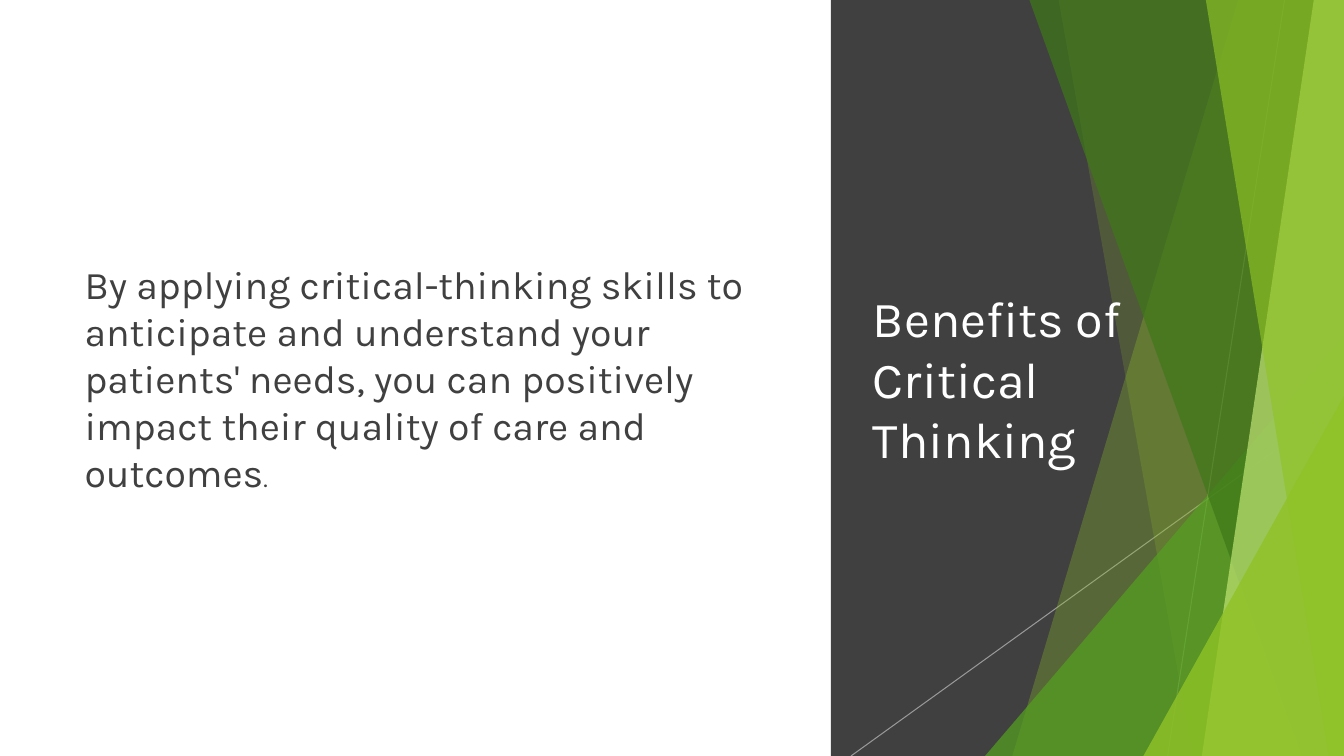
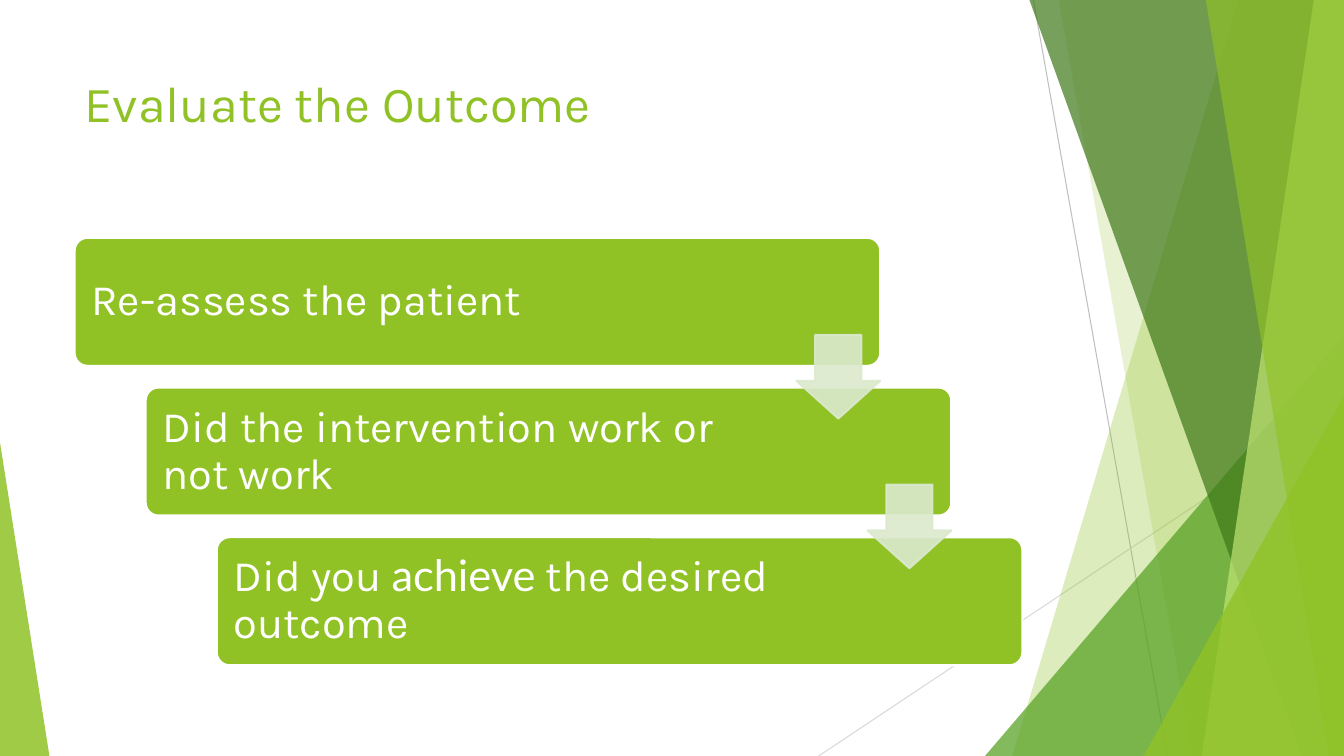
from lxml.etree import SubElement
from pptx import Presentation
from pptx.dml.color import RGBColor
from pptx.enum.shapes import MSO_CONNECTOR as Connector, MSO_SHAPE as Preset
from pptx.enum.text import MSO_ANCHOR as Anchor, PP_ALIGN as Align
from pptx.oxml.ns import qn
from pptx.util import Inches, Pt

WIDTH, HEIGHT = 13.33, 7.5

WHITE = RGBColor(0xFF, 0xFF, 0xFF)
CHARCOAL = RGBColor(0x40, 0x40, 0x40)
GREY = RGBColor(0xBF, 0xBF, 0xBF)
PALE_GREY = RGBColor(0xD9, 0xD9, 0xD9)
LIME = RGBColor(0x90, 0xC2, 0x26)
LIGHT_LIME = RGBColor(0xC0, 0xE4, 0x74)
GREEN = RGBColor(0x54, 0xA0, 0x21)
DARK_GREEN = RGBColor(0x3F, 0x78, 0x19)
MIST = RGBColor(0xDB, 0xE9, 0xCD)

FONT = "Karla"
ACCENT_FONT = "Lato"
TITLE_SIZE = 36


class Deck:
    """Holds the shared style and the slide being built."""

    def __init__(self):
        self.presentation = Presentation()
        self.presentation.slide_width = Inches(WIDTH)
        self.presentation.slide_height = Inches(HEIGHT)
        self.slide = None

    def new_slide(self):
        self.slide = self.presentation.slides.add_slide(self.presentation.slide_layouts[6])

    def finish(self, shape, fill, opacity=100, line=None):
        """Set fill, outline and opacity, and drop the shadow."""
        shape.shadow.inherit = False
        shape.fill.solid()
        shape.fill.fore_color.rgb = fill
        if line is None:
            shape.line.fill.background()
        else:
            shape.line.color.rgb = line
            shape.line.width = Pt(1.5)
        self.fade(shape, opacity)
        return shape

    def fade(self, shape, opacity):
        if opacity < 100:
            for color in shape.element.spPr.iter(qn("a:srgbClr")):
                SubElement(color, qn("a:alpha"), val=str(opacity * 1000))

    def shape(self, preset, left, top, width, height, fill, opacity=100, line=None, adjustments=()):
        shape = self.slide.shapes.add_shape(
            preset, Inches(left), Inches(top), Inches(width), Inches(height))
        for index, value in enumerate(adjustments):
            shape.adjustments[index] = value
        return self.finish(shape, fill, opacity, line)

    def line(self, start, end, color, opacity=100):
        connector = self.slide.shapes.add_connector(
            Connector.STRAIGHT, *(Inches(value) for value in (*start, *end)))
        connector.line.color.rgb = color
        connector.line.width = Pt(0.75)
        SubElement(connector.element.spPr, qn("a:effectLst"))
        self.fade(connector, opacity)

    def facet(self, top_left, bottom_left, color, opacity):
        """Full-height band from a slanted left side to the slide's right edge."""
        builder = self.slide.shapes.build_freeform(Inches(top_left), 0)
        corners = [(WIDTH, 0), (WIDTH, HEIGHT), (bottom_left, HEIGHT)]
        builder.add_line_segments([(Inches(x), Inches(y)) for x, y in corners])
        self.finish(builder.convert_to_shape(), color, opacity)

    def corner(self, left, top, width, apex, color, opacity):
        """Right triangle standing on the bottom edge; apex 0 is left, 1 is right."""
        self.shape(Preset.ISOSCELES_TRIANGLE, left, top, width, HEIGHT - top,
                   color, opacity, adjustments=[apex])

    def facets(self):
        self.facet(12.28, 10.04, LIME, 30)
        self.facet(10.5, 11.83, LIME, 20)
        self.corner(9.77, 3.33, 3.56, 1, GREEN, 72)
        self.facet(10.21, 12.91, DARK_GREEN, 70)
        self.facet(13.03, 11.92, LIGHT_LIME, 70)
        self.facet(11.96, 13.18, LIME, 65)
        self.corner(11.34, 3.93, 1.99, 1, LIME, 80)

    def fill_text(self, shape, runs, color, anchor):
        """Fill a shape with one paragraph of (text, size, font) runs."""
        frame = shape.text_frame
        frame.word_wrap = True
        frame.vertical_anchor = anchor
        paragraph = frame.paragraphs[0]
        paragraph.alignment = Align.LEFT
        for text, size, font in runs:
            run = paragraph.add_run()
            run.text = text
            run.font.size = Pt(size)
            run.font.name = font
            run.font.color.rgb = color
        return frame

    def text(self, left, top, width, height, runs, color, anchor=Anchor.MIDDLE):
        box = self.slide.shapes.add_textbox(
            Inches(left), Inches(top), Inches(width), Inches(height))
        self.fill_text(box, runs, color, anchor)

    def title(self, left, top, width, height, text, color, anchor):
        self.text(left, top, width, height, [(text, TITLE_SIZE, FONT)], color, anchor)

    def step(self, left, top, width, height, runs):
        box = self.shape(Preset.ROUNDED_RECTANGLE, left, top, width, height,
                         LIME, line=WHITE, adjustments=[0.1])
        sized_runs = [(text, 31, font) for text, font in runs]
        frame = self.fill_text(box, sized_runs, WHITE, Anchor.MIDDLE)
        frame.margin_left = frame.margin_top = frame.margin_bottom = Inches(0.13)
        frame.margin_right = Inches(1.67)
        frame.paragraphs[0].line_spacing = 0.9

    def staircase(self, steps, left, top, right, bottom, width, height):
        """Boxes stepping down to the right, an arrow across each gap."""
        gaps = len(steps) - 1
        shift = (right - left - width) / gaps
        drop = (bottom - top - height) / gaps
        places = [(left + index * shift, top + index * drop) for index in range(len(steps))]
        for (x, y), runs in zip(places, steps):
            self.step(x, y, width, height, runs)
        arrow = 0.83
        for x, y in places[:-1]:
            self.shape(Preset.DOWN_ARROW, x + width - arrow, y + (height + drop - arrow) / 2,
                       arrow, arrow, MIST, 90, MIST, [0.55, 0.45])


def benefits_slide(deck):
    deck.new_slide()
    deck.text(0.74, 1.37, 6.73, 4.76, [
        ("By applying critical-thinking skills to anticipate and understand your patients' "
         "needs, you can positively impact their quality of care and outcomes", 28, FONT),
        (".", 18, FONT),
    ], CHARCOAL)
    deck.shape(Preset.RECTANGLE, 8.24, 0, WIDTH - 8.24, HEIGHT, CHARCOAL)
    deck.line((12.74, 0), (11.58, HEIGHT), GREY, 70)
    deck.line((13.2, 4.07), (8.44, HEIGHT), GREY, 70)
    deck.facets()
    deck.title(8.56, 1.37, 3.69, 4.76, "Benefits of Critical Thinking", WHITE, Anchor.MIDDLE)


def outcome_slide(deck):
    deck.new_slide()
    deck.line((10.25, 0), (11.58, HEIGHT), GREY)
    deck.line((WIDTH, 4.03), (8.12, HEIGHT), PALE_GREY)
    deck.facets()
    deck.corner(0, 4.39, 0.49, 0, LIME, 85)
    deck.title(0.74, 0.67, 9.4, 1.44, "Evaluate the Outcome", LIME, Anchor.TOP)
    steps = [
        [("Re-assess the patient", FONT)],
        [("Did the intervention work or not work", FONT)],
        [("Did you ", FONT), ("achieve", ACCENT_FONT), (" the desired outcome", FONT)],
    ]
    deck.staircase(steps, left=0.74, top=2.36, right=10.14, bottom=6.6, width=7.99, height=1.27)


def main():
    deck = Deck()
    benefits_slide(deck)
    outcome_slide(deck)
    deck.presentation.save("out.pptx")


if __name__ == "__main__":
    main()
